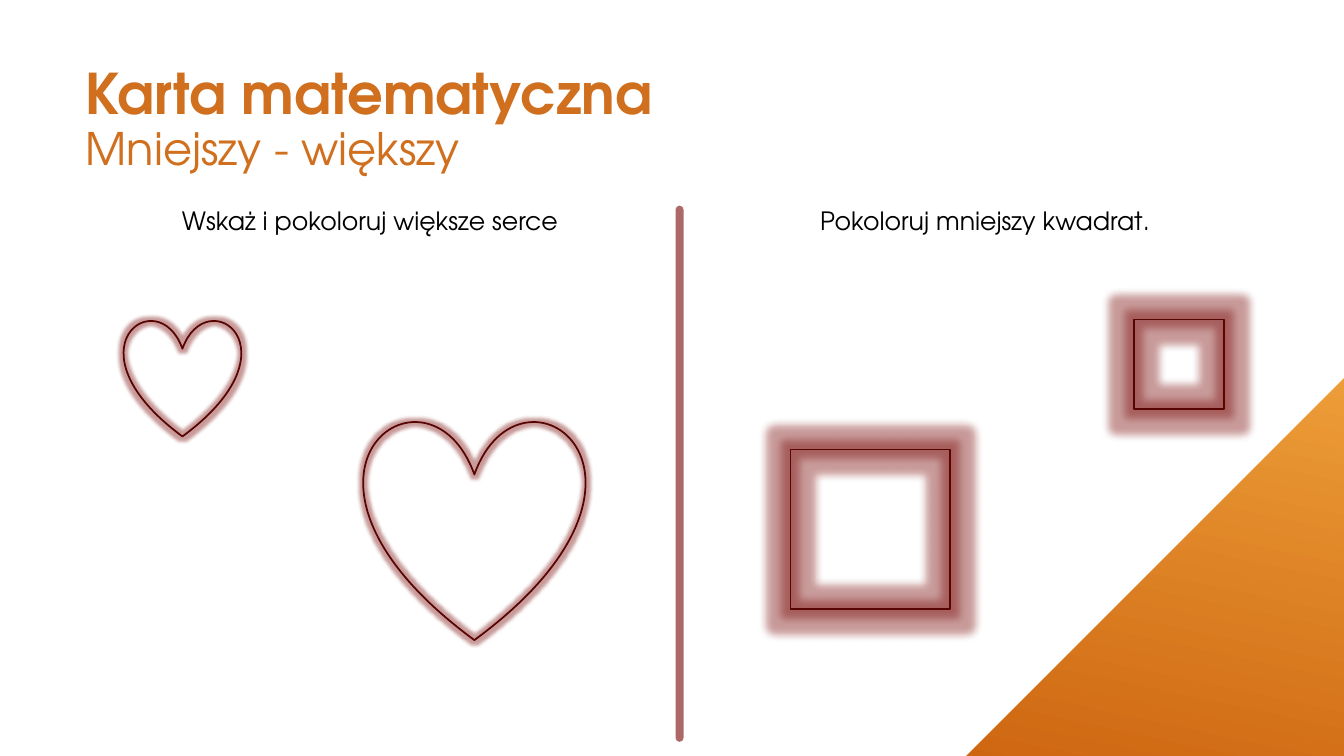
"""Build a math worksheet slide on smaller and larger shapes."""
import dataclasses

import lxml.etree
import pptx
import pptx.dml.color
import pptx.enum.shapes
import pptx.enum.text
import pptx.oxml
import pptx.oxml.ns
import pptx.util

Inches = pptx.util.Inches
Pt = pptx.util.Pt
Kind = pptx.enum.shapes.MSO_SHAPE
Align = pptx.enum.text.PP_ALIGN
Anchor = pptx.enum.text.MSO_ANCHOR
qn = pptx.oxml.ns.qn

WIDE, HIGH = 13.33, 7.5
FONT = "TeX Gyre Adventor"
ORANGE, BLACK, WHITE = "D06F1E", "000000", "FFFFFF"
EDGE, GLOW = "570402", "760603"


@dataclasses.dataclass
class Figure:
    kind: Kind
    left: float
    top: float
    size: float
    glow: float


@dataclasses.dataclass
class Task:
    left: float
    text: str


FIGURES = [
    Figure(Kind.HEART, 1.23, 3.17, 1.16, 5),
    Figure(Kind.HEART, 3.61, 4.16, 2.19, 5),
    Figure(Kind.RECTANGLE, 7.84, 4.46, 1.58, 12),
    Figure(Kind.RECTANGLE, 11.25, 3.17, 0.89, 12),
]
TASKS = [
    Task(0.75, "Wskaż i pokoloruj większe serce"),
    Task(6.85, "Pokoloruj mniejszy kwadrat."),
]


def color(code: str) -> pptx.dml.color.RGBColor:
    return pptx.dml.color.RGBColor.from_string(code)


def add_alpha(node, share: int) -> None:
    lxml.etree.SubElement(node, qn("a:alpha"), val=str(share * 1000))


def add_shape(slide, kind, left: float, top: float, wide: float, high: float):
    shape = slide.shapes.add_shape(
        kind, Inches(left), Inches(top), Inches(wide), Inches(high))
    shape.shadow.inherit = False
    return shape


def draw_back(slide) -> None:
    base = add_shape(slide, Kind.RECTANGLE, 0, 0, WIDE, HIGH)
    base.line.fill.background()
    base.fill.gradient()
    base.fill.gradient_angle = 258
    stops = zip(base.fill.gradient_stops, (0.1, 1), ("FFBF50", "C04D00"))
    for stop, place, code in stops:
        stop.position = place
        stop.color.rgb = color(code)
    page = add_shape(slide, Kind.SNIP_1_RECTANGLE, 0, 0, WIDE, HIGH)
    page.adjustments[0] = 0.5
    page.line.fill.background()
    page.fill.solid()
    page.fill.fore_color.rgb = color(WHITE)
    page._element.spPr.find(qn("a:xfrm")).set("flipV", "1")


def draw_figure(slide, item: Figure) -> None:
    shape = add_shape(
        slide, item.kind, item.left, item.top, item.size, item.size)
    shape.fill.background()
    shape.line.color.rgb = color(EDGE)
    shape.line.width = Pt(1.25)
    effects = shape._element.spPr.find(qn("a:effectLst"))
    glow = lxml.etree.SubElement(
        effects, qn("a:glow"), rad=str(Pt(item.glow)))
    add_alpha(lxml.etree.SubElement(glow, qn("a:srgbClr"), val=GLOW), 40)


def add_text(slide, text: str, left: float, top: float, wide: float,
             high: float):
    box = slide.shapes.add_textbox(
        Inches(left), Inches(top), Inches(wide), Inches(high))
    frame = box.text_frame
    frame.word_wrap = True
    frame.text = text
    return frame


def style_run(run, size: float, code: str, bold: bool = False) -> None:
    run.font.name = FONT
    run.font.size = Pt(size)
    run.font.bold = bold
    run.font.color.rgb = color(code)


def draw_title(slide) -> None:
    frame = add_text(slide, "Karta matematyczna\vMniejszy - większy",
                     0.75, 0.48, 10.85, 1.31)
    frame.vertical_anchor = Anchor.BOTTOM
    para = frame.paragraphs[0]
    para.line_spacing = 0.9
    head, sub = para.runs
    style_run(head, 40, ORANGE, True)
    style_run(sub, 32, ORANGE)


def draw_task(slide, item: Task) -> None:
    frame = add_text(slide, item.text, item.left, 1.99, 5.84, 0.4)
    para = frame.paragraphs[0]
    para.alignment = Align.CENTER
    style_run(para.runs[0], 18, BLACK)


def draw_split(slide) -> None:
    line = slide.shapes.add_connector(
        pptx.enum.shapes.MSO_CONNECTOR.STRAIGHT,
        Inches(6.74), Inches(2.08), Inches(6.74), Inches(7.32))
    line.line.color.rgb = color(GLOW)
    line.line.width = Pt(5.75)
    props = line._element.spPr
    stroke = props.find(qn("a:ln"))
    stroke.set("cap", "rnd")
    add_alpha(stroke.find(".//" + qn("a:srgbClr")), 60)
    lxml.etree.SubElement(props, qn("a:effectLst"))


def main() -> None:
    deck = pptx.Presentation()
    deck.slide_width, deck.slide_height = Inches(WIDE), Inches(HIGH)
    slide = deck.slides.add_slide(deck.slide_layouts[6])
    draw_back(slide)
    draw_title(slide)
    for item in FIGURES:
        draw_figure(slide, item)
    for item in TASKS:
        draw_task(slide, item)
    draw_split(slide)
    deck.save("out.pptx")


if __name__ == "__main__":
    main()
